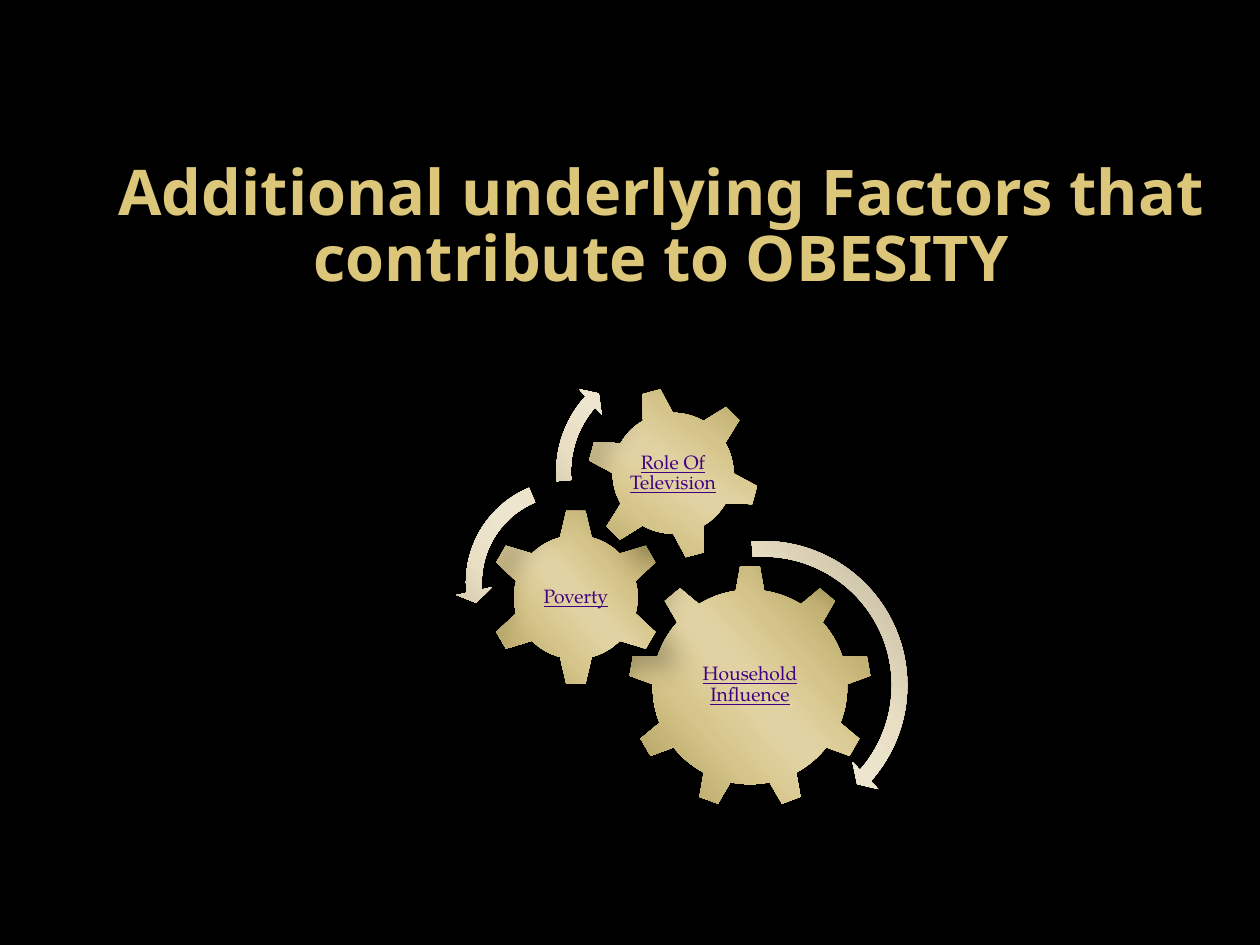
from lxml.etree import SubElement
from pptx import Presentation
from pptx.dml.color import RGBColor
from pptx.enum.shapes import MSO_SHAPE
from pptx.enum.text import MSO_ANCHOR, PP_ALIGN
from pptx.oxml.ns import qn
from pptx.util import Cm, Pt

GOLD = ["A59452", "D5C489", "E1D2A3", "E1D2A3", "D6C58A", "A59452"]
CREAM = ["B6AD93", "E7DEC4", "EDE5CE", "EDE5CE", "E7DEC4", "B6AD93"]
STOPS = [0, 33, 47, 53, 68, 100]

GEARS = [
    ("Household Influence", MSO_SHAPE.GEAR_9, 3.48, 4.34, 4.9, 0, 2.92, 2.51, 0.05),
    ("Poverty", MSO_SHAPE.GEAR_6, 0.64, 3.2, 3.56, 0, 1.78, 1.75, 0),
    ("Role Of Television", MSO_SHAPE.GEAR_6, 2.64, 0.74, 3.48, 345, 1.96, 1.96, 0),
]
ARROWS = [
    (MSO_SHAPE.CIRCULAR_ARROW, 3.07, 3.63, 6.25, (0.05, 2.99, 24.87, 159.26, 0.06)),
    (MSO_SHAPE.LEFT_CIRCULAR_ARROW, 0, 2.41, 4.55, (0.07, 4.3, 104.89, 148.38, 0.08)),
    (MSO_SHAPE.CIRCULAR_ARROW, 1.83, 0, 4.9, (0.06, 3.94, 133.14, 105.08, 0.07)),
]


def color(value):
    """Turn a hex string into a colour."""
    return RGBColor.from_string(value)


def add_text(page, text, left, top, width, height, insets, anchor, spacing, size, font, tint):
    """Place one centred paragraph and return its span."""
    box = page.shapes.add_textbox(Cm(left), Cm(top), Cm(width), Cm(height))
    frame = box.text_frame
    frame.word_wrap = True
    frame.vertical_anchor = anchor
    frame.margin_left = frame.margin_right = Cm(insets[0])
    frame.margin_top, frame.margin_bottom = Cm(insets[1]), Cm(insets[2])
    para = frame.paragraphs[0]
    para.alignment = PP_ALIGN.CENTER
    para.line_spacing = spacing
    span = para.add_run()
    span.text = text
    span.font.size = Pt(size)
    span.font.name = font
    span.font.color.rgb = color(tint)
    return span


def add_metal_shape(page, kind, left, top, size, tints):
    """Place a square shape with a metallic gradient and a soft shadow."""
    shape = page.shapes.add_shape(kind, Cm(left), Cm(top), Cm(size), Cm(size))
    shape.line.fill.background()
    shape.fill.gradient()
    shape.fill.gradient_angle = 221
    properties = shape.element.spPr
    stops = properties.find(qn("a:gradFill")).find(qn("a:gsLst"))
    for stop in list(stops):
        stops.remove(stop)
    for position, tint in zip(STOPS, tints):
        stop = SubElement(stops, qn("a:gs"), pos=str(position * 1000))
        SubElement(stop, qn("a:srgbClr"), val=tint)
    shape.shadow.inherit = False
    shadow = SubElement(
        properties.find(qn("a:effectLst")), qn("a:outerShdw"),
        blurRad=str(Pt(15)), dist=str(Pt(18)), dir=str(45 * 60000),
        algn="tl", rotWithShape="0",
    )
    tone = SubElement(shadow, qn("a:srgbClr"), val="000000")
    SubElement(tone, qn("a:alpha"), val="26000")
    return shape


def add_title(page, left, top, width, height):
    """Place the heading in its box."""
    span = add_text(
        page, "Additional underlying Factors that contribute to OBESITY",
        left, top, width, height, (0.25, 0.13, 1.9), MSO_ANCHOR.BOTTOM,
        0.88, 36, "Noto Sans", "DCC679",
    )
    span.font.bold = True


def add_gear_diagram(page, left, top):
    """Place the labelled gears and their turning arrows."""
    for label, kind, x, y, size, turn, width, height, lift in GEARS:
        gear = add_metal_shape(page, kind, left + x, top + y, size, GOLD)
        gear.rotation = turn
        span = add_text(
            page, label, left + x + (size - width) / 2,
            top + y + (size - height) / 2 - lift, width, height,
            (0.05, 0.05, 0.05), MSO_ANCHOR.MIDDLE,
            0.9, 11, "TeX Gyre Pagella", "410082",
        )
        span.font.underline = True
    for kind, x, y, size, adjustments in ARROWS:
        arrow = add_metal_shape(page, kind, left + x, top + y, size, CREAM)
        for index, value in enumerate(adjustments):
            arrow.adjustments[index] = value


def main():
    """Build and save the deck."""
    deck = Presentation()
    deck.slide_width, deck.slide_height = Cm(25.4), Cm(19.05)
    page = deck.slides.add_slide(deck.slide_layouts[6])
    page.background.fill.solid()
    page.background.fill.fore_color.rgb = color("000000")
    add_title(page, 2.11, 0.43, 22.43, 7.42)
    add_gear_diagram(page, 9.19, 7.06)
    deck.save("out.pptx")


if __name__ == "__main__":
    main()
